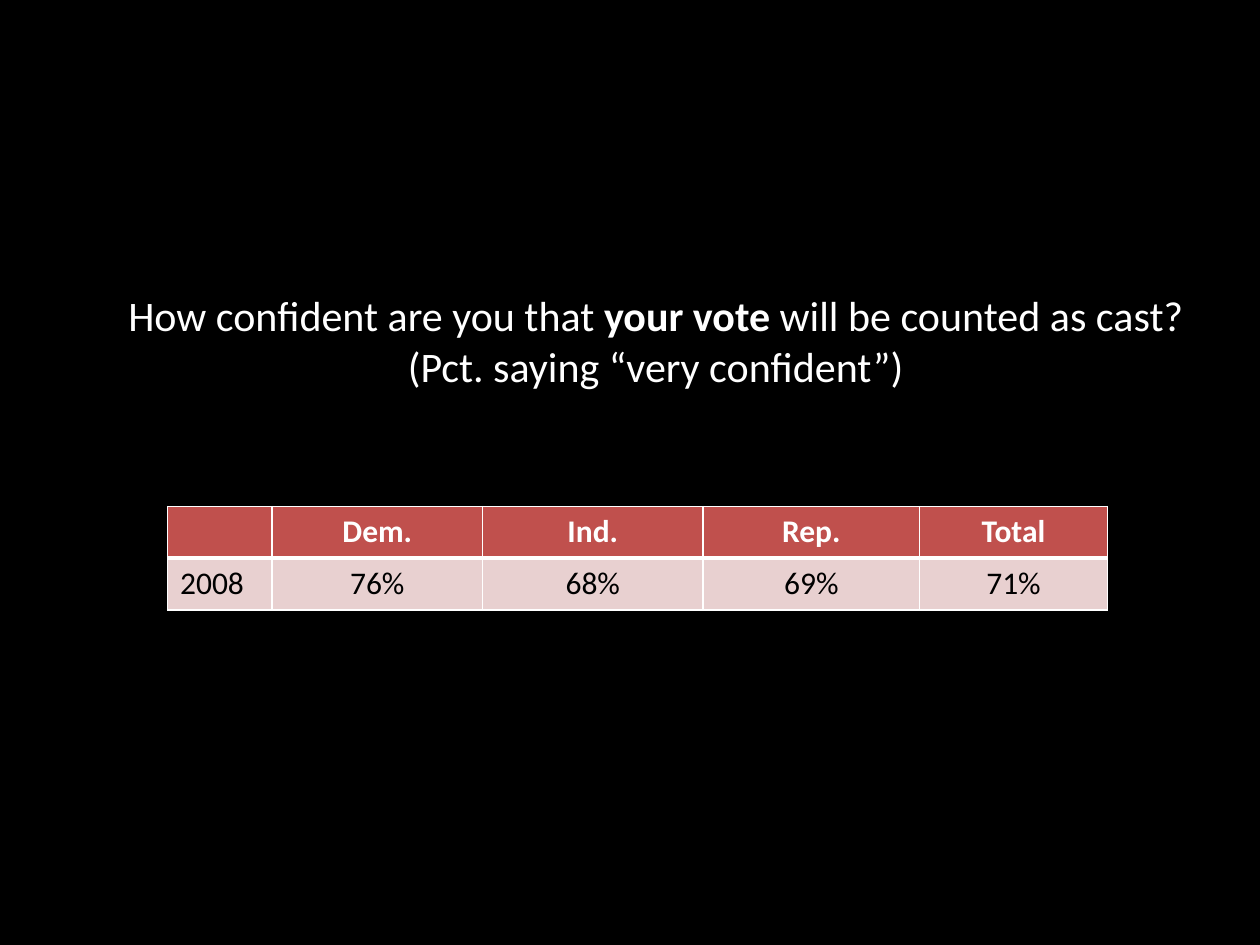
from dataclasses import dataclass

from lxml.etree import SubElement
from pptx import Presentation
from pptx.dml.color import RGBColor
from pptx.enum.text import MSO_ANCHOR, MSO_AUTO_SIZE, PP_ALIGN
from pptx.oxml.ns import qn
from pptx.util import Inches, Pt

COLORS = {
    "background": "000000",
    "light": "FFFFFF",
    "dark": "000000",
    "header": "C0504D",
    "body": "E8D0D0",
}
COLUMN_WIDTHS = [0.83, 1.67, 1.75, 1.72, 1.49]
ROW_HEIGHT = 0.41


@dataclass
class RowStyle:
    values: list[str]
    fill: str
    color: str
    bold: bool
    top_border: float
    bottom_border: float


ROWS = [
    RowStyle(["", "Dem.", "Ind.", "Rep.", "Total"], "header", "light", True, 1, 3),
    RowStyle(["2008", "76%", "68%", "69%", "71%"], "body", "dark", False, 3, 1),
]


def add_span(para, text: str, *, size: float, color: str, bold: bool = False) -> None:
    span = para.add_run()
    span.text = text
    span.font.name = "Calibri"
    span.font.size = Pt(size)
    span.font.bold = bold
    span.font.color.rgb = RGBColor.from_string(COLORS[color])


def set_borders(cell, top: float, bottom: float) -> None:
    properties = cell._tc.get_or_add_tcPr()
    widths = {"lnL": 1, "lnR": 1, "lnT": top, "lnB": bottom}
    for position, (side, width) in enumerate(widths.items()):
        line = SubElement(properties, qn(f"a:{side}"), w=str(Pt(width)))
        fill = SubElement(line, qn("a:solidFill"))
        SubElement(fill, qn("a:srgbClr"), val=COLORS["light"])
        properties.insert(position, line)


def add_question(page) -> None:
    box = page.shapes.add_textbox(Inches(0.92), Inches(2.25), Inches(8.6), Inches(0.91))
    frame = box.text_frame
    frame.word_wrap = False
    frame.auto_size = MSO_AUTO_SIZE.SHAPE_TO_FIT_TEXT
    question = frame.paragraphs[0]
    add_span(question, "How confident are you that ", size=24, color="light")
    add_span(question, "your vote", size=24, color="light", bold=True)
    add_span(question, " will be counted as cast?", size=24, color="light")
    note = frame.add_paragraph()
    note.alignment = PP_ALIGN.CENTER
    add_span(note, "(Pct. saying “very confident”)", size=24, color="light")


def add_confidence_table(page) -> None:
    table = page.shapes.add_table(
        len(ROWS), len(COLUMN_WIDTHS), Inches(1.33), Inches(4.02),
        Inches(sum(COLUMN_WIDTHS)), Inches(ROW_HEIGHT * len(ROWS)),
    ).table
    for column, width in zip(table.columns, COLUMN_WIDTHS):
        column.width = Inches(width)
    for row, style in zip(table.rows, ROWS):
        row.height = Inches(ROW_HEIGHT)
        for index, (cell, value) in enumerate(zip(row.cells, style.values)):
            cell.fill.solid()
            cell.fill.fore_color.rgb = RGBColor.from_string(COLORS[style.fill])
            cell.vertical_anchor = MSO_ANCHOR.TOP
            set_borders(cell, style.top_border, style.bottom_border)
            para = cell.text_frame.paragraphs[0]
            para.alignment = PP_ALIGN.CENTER if index else PP_ALIGN.LEFT
            if value:
                add_span(para, value, size=18, color=style.color, bold=style.bold)


def main() -> None:
    deck = Presentation()
    deck.slide_width, deck.slide_height = Inches(10), Inches(7.5)
    page = deck.slides.add_slide(deck.slide_layouts[6])
    page.background.fill.solid()
    page.background.fill.fore_color.rgb = RGBColor.from_string(COLORS["background"])
    add_confidence_table(page)
    add_question(page)
    deck.save("out.pptx")


if __name__ == "__main__":
    main()
